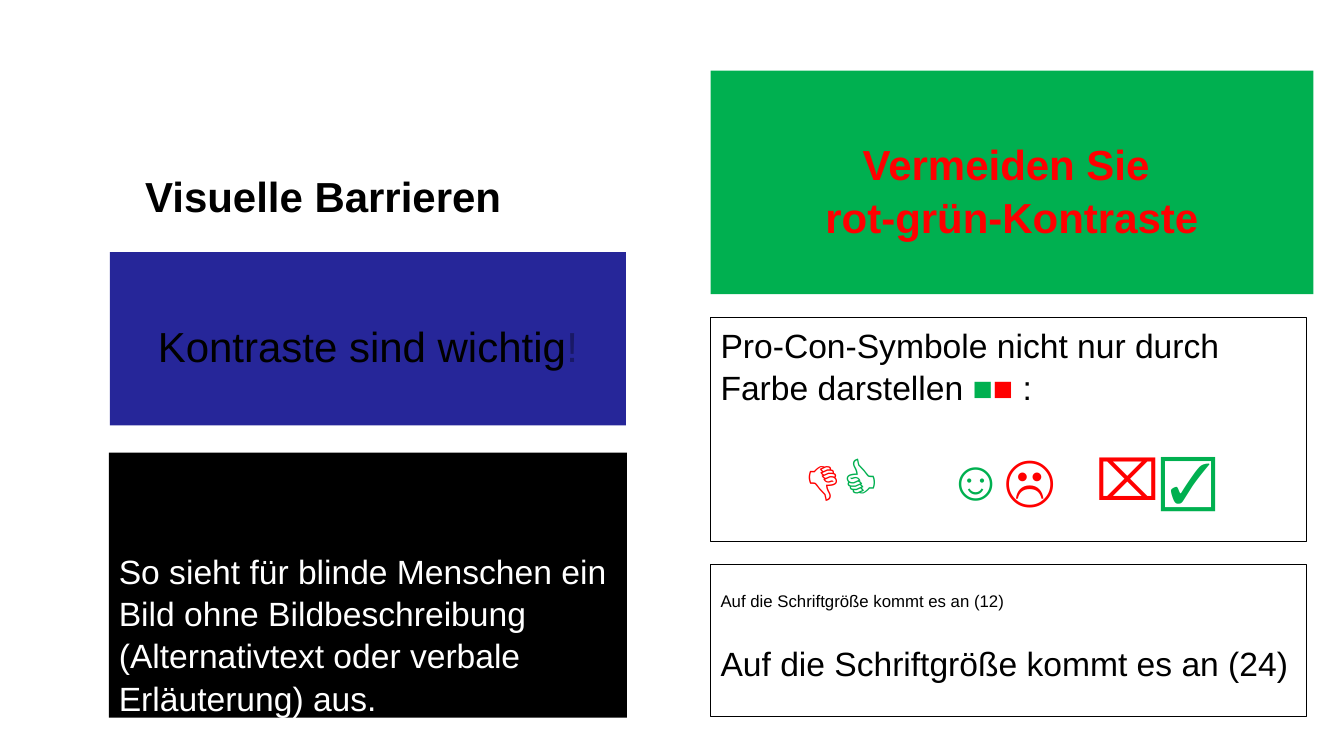
from dataclasses import dataclass

from lxml import etree
from pptx import Presentation
from pptx.dml.color import RGBColor
from pptx.enum.shapes import MSO_SHAPE
from pptx.enum.text import MSO_ANCHOR, PP_ALIGN
from pptx.oxml.ns import qn
from pptx.util import Pt

RECTANGLE = MSO_SHAPE.RECTANGLE
TOP = MSO_ANCHOR.TOP
LEFT, CENTER = PP_ALIGN.LEFT, PP_ALIGN.CENTER

FONT = "Arial"
LINE_SPACING = 1.05
SIDE_INSET = 7.2
COLORS = {
    "black": "000000",
    "white": "FFFFFF",
    "blue": "262699",
    "dark blue": "191966",
    "green": "00B050",
    "red": "FF0000",
}


@dataclass(frozen=True)
class TextRun:
    text: str
    size: float
    color: str = "black"
    bold: bool = False


@dataclass(frozen=True)
class TextParagraph:
    runs: tuple[TextRun, ...]
    alignment: PP_ALIGN = LEFT
    space_before: float = 0
    tab_stops: tuple[float, ...] = ()


@dataclass(frozen=True)
class Panel:
    """A rectangle with text; a panel without a fill may have a thin outline."""
    left: float
    top: float
    width: float
    height: float
    paragraphs: tuple[TextParagraph, ...]
    fill: str | None = None
    outline: str | None = None
    side_inset: float = SIDE_INSET
    top_inset: float = 3.6


RIGHT_COLUMN = 507.6
RIGHT_WIDTH = 425.5

PANELS = (
    Panel(103.7, 120.2, 807.8, 59.8, side_inset=0, top_inset=0, paragraphs=(
        TextParagraph((TextRun("Visuelle Barrieren", 30, bold=True),)),
    )),
    Panel(78.5, 180, 368.6, 123.8, fill="blue", top_inset=47, paragraphs=(
        TextParagraph((
            TextRun("Kontraste sind wichtig", 30),
            TextRun("!", 30, "dark blue"),
        ), CENTER),
    )),
    Panel(77.8, 323.3, 370, 189.4, fill="black", top_inset=68.7, paragraphs=(
        TextParagraph((TextRun(
            "So sieht für blinde Menschen ein Bild ohne Bildbeschreibung "
            "(Alternativtext oder verbale Erläuterung) aus.", 24, "white"),)),
    )),
    Panel(RIGHT_COLUMN, 50.4, 430.6, 159.8, fill="green", top_inset=47, paragraphs=(
        TextParagraph((TextRun("Vermeiden Sie ", 30, "red", True),), CENTER),
        TextParagraph((TextRun("rot-grün-Kontraste", 30, "red", True),), CENTER),
    )),
    Panel(RIGHT_COLUMN, 226.8, RIGHT_WIDTH, 159.8, outline="black", paragraphs=(
        TextParagraph((
            TextRun("Pro-Con-Symbole nicht nur durch Farbe darstellen ", 24),
            TextRun("■", 24, "green"),
            TextRun("■ ", 24, "red"),
            TextRun(":", 24),
        )),
        TextParagraph((
            TextRun("\t👎", 40, "red", True),
            TextRun("👍\t☺", 40, "green", True),
            TextRun("☹\t", 40, "red", True),
            TextRun("⌧", 40, "red"),
            TextRun("☑", 40, "green", True),
        ), space_before=24, tab_stops=(60, 162, 268)),
    )),
    Panel(RIGHT_COLUMN, 403.2, RIGHT_WIDTH, 108.7, outline="black", top_inset=18, paragraphs=(
        TextParagraph((TextRun("Auf die Schriftgröße kommt es an (12)", 12),)),
        TextParagraph((TextRun("Auf die Schriftgröße kommt es an (24)", 24),),
                      space_before=21.7),
    )),
)


def rgb(name: str) -> RGBColor:
    return RGBColor.from_string(COLORS[name])


def add_tab_stops(paragraph, positions: tuple[float, ...]) -> None:
    tab_list = etree.SubElement(paragraph._p.get_or_add_pPr(), qn("a:tabLst"))
    for position in positions:
        etree.SubElement(tab_list, qn("a:tab"), pos=str(Pt(position)), algn="l")


def write_paragraph(paragraph, content: TextParagraph) -> None:
    paragraph.alignment = content.alignment
    paragraph.line_spacing = LINE_SPACING
    paragraph.space_before = Pt(content.space_before)
    if content.tab_stops:
        add_tab_stops(paragraph, content.tab_stops)
    for text_run in content.runs:
        run = paragraph.add_run()
        run.text = text_run.text
        run.font.name = FONT
        run.font.size = Pt(text_run.size)
        run.font.bold = text_run.bold
        run.font.color.rgb = rgb(text_run.color)


def draw_panel(slide, panel: Panel) -> None:
    shape = slide.shapes.add_shape(
        RECTANGLE, Pt(panel.left), Pt(panel.top), Pt(panel.width), Pt(panel.height))
    shape.shadow.inherit = False
    if panel.fill:
        shape.fill.solid()
        shape.fill.fore_color.rgb = rgb(panel.fill)
    else:
        shape.fill.background()
    if panel.outline:
        shape.line.color.rgb = rgb(panel.outline)
        shape.line.width = Pt(0.75)
    else:
        shape.line.fill.background()

    frame = shape.text_frame
    frame.word_wrap = True
    frame.vertical_anchor = TOP
    frame.margin_left = frame.margin_right = Pt(panel.side_inset)
    frame.margin_top = Pt(panel.top_inset)
    frame.margin_bottom = 0
    for index, content in enumerate(panel.paragraphs):
        paragraph = frame.add_paragraph() if index else frame.paragraphs[0]
        write_paragraph(paragraph, content)


def main() -> None:
    presentation = Presentation()
    presentation.slide_width = Pt(960)
    presentation.slide_height = Pt(540)
    slide = presentation.slides.add_slide(presentation.slide_layouts[6])
    for panel in PANELS:
        draw_panel(slide, panel)
    presentation.save("out.pptx")


if __name__ == "__main__":
    main()
